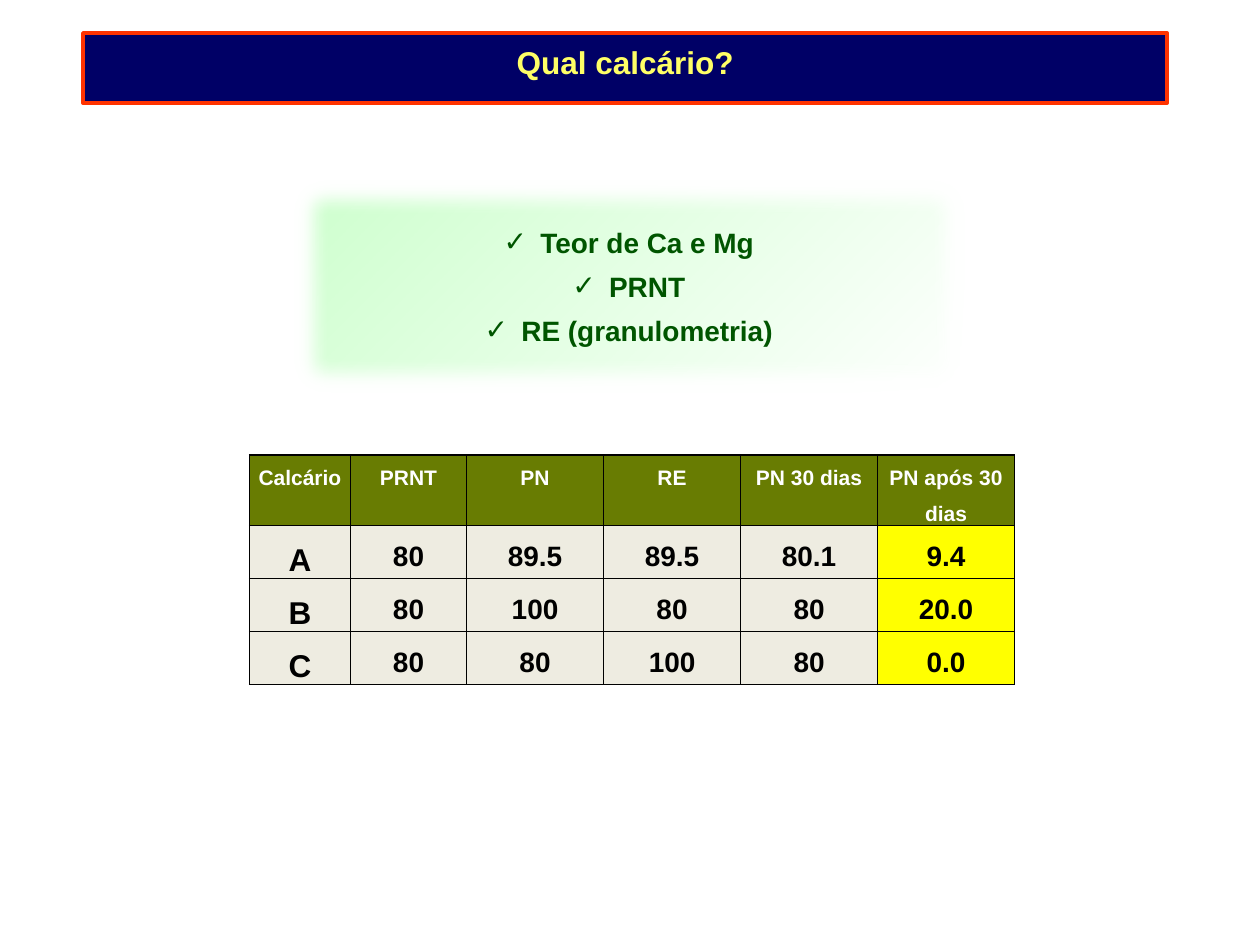
from pptx import Presentation
from pptx.dml.color import RGBColor
from pptx.enum.shapes import MSO_SHAPE as Shape
from pptx.enum.text import MSO_ANCHOR as Anchor, PP_ALIGN as Align
from pptx.oxml.ns import qn
from pptx.util import Pt
from lxml.etree import SubElement

COLORS = {
    "navy": "000066",
    "orange": "FF3300",
    "title": "FFFF66",
    "mint": "CCFFCC",
    "white": "FFFFFF",
    "cream": "FFFF99",
    "green": "005500",
    "olive": "687C02",
    "beige": "EEECE1",
    "yellow": "FFFF00",
    "black": "000000",
}
CRITERIA = ["Teor de Ca e Mg", "PRNT", "RE (granulometria)"]
LIMESTONES = [
    ["Calcário", "PRNT", "PN", "RE", "PN 30 dias", "PN após 30 dias"],
    ["A", "80", "89.5", "89.5", "80.1", "9.4"],
    ["B", "80", "100", "80", "80", "20.0"],
    ["C", "80", "80", "100", "80", "0.0"],
]
COLUMN_WIDTHS = [57.7, 66.3] + [78.3] * 4
ROW_HEIGHTS = [40] + [30.25] * 3


def color(name):
    return RGBColor.from_string(COLORS[name])


def format_paragraph(paragraph, size, color_name):
    paragraph.alignment = Align.CENTER
    for span in paragraph.runs:
        span.font.name = "Arial"
        span.font.size = Pt(size)
        span.font.bold = True
        span.font.color.rgb = color(color_name)


def add_box(page, left, top, width, height, line_name, line_width):
    box = page.shapes.add_shape(
        Shape.RECTANGLE, Pt(left), Pt(top), Pt(width), Pt(height))
    box.shadow.inherit = False
    box.line.color.rgb = color(line_name)
    box.line.width = Pt(line_width)
    box.text_frame.word_wrap = True
    return box


def add_title(page):
    box = add_box(page, 47.5, 18.9, 619.4, 40, "orange", 2.25)
    box.fill.solid()
    box.fill.fore_color.rgb = color("navy")
    frame = box.text_frame
    frame.vertical_anchor = Anchor.TOP
    frame.text = "Qual calcário?"
    frame.paragraphs[0].line_spacing = 1.1
    format_paragraph(frame.paragraphs[0], 18, "title")


def soften_edges(box, radius):
    effects = box._element.spPr.find(qn("a:effectLst"))
    SubElement(effects, qn("a:softEdge"), rad=str(Pt(radius)))


def add_check_mark(paragraph):
    properties = paragraph._p.get_or_add_pPr()
    properties.set("marL", str(Pt(21)))
    properties.set("indent", str(Pt(-21)))
    SubElement(properties, qn("a:buFont"), typeface="Arial")
    SubElement(properties, qn("a:buChar"), char="✓")


def add_criteria(page):
    box = add_box(page, 164.2, 99.4, 390.2, 128.2, "cream", 1.5)
    box.fill.gradient()
    box.fill.gradient_angle = 315
    for stop, name in zip(box.fill.gradient_stops, ["mint", "white"]):
        stop.color.rgb = color(name)
    soften_edges(box, 12.5)
    frame = box.text_frame
    frame.vertical_anchor = Anchor.MIDDLE
    frame.text = "\n".join(CRITERIA)
    for index, paragraph in enumerate(frame.paragraphs):
        if index:
            paragraph.space_before = Pt(6)
        add_check_mark(paragraph)
        format_paragraph(paragraph, 16, "green")


def add_borders(cell):
    properties = cell._tc.get_or_add_tcPr()
    for side in ["lnL", "lnR", "lnT", "lnB"]:
        border = SubElement(properties, qn(f"a:{side}"), w=str(Pt(1)))
        fill = SubElement(border, qn("a:solidFill"))
        SubElement(fill, qn("a:srgbClr"), val=COLORS["black"])


def fill_cell(cell, text, size, text_color, fill_color):
    cell.margin_left = cell.margin_right = Pt(5)
    cell.margin_top = cell.margin_bottom = 0
    add_borders(cell)
    cell.fill.solid()
    cell.fill.fore_color.rgb = color(fill_color)
    cell.text_frame.text = text
    paragraph = cell.text_frame.paragraphs[0]
    paragraph.line_spacing = 1.5
    format_paragraph(paragraph, size, text_color)


def add_limestone_table(page):
    table = page.shapes.add_table(
        len(LIMESTONES), len(COLUMN_WIDTHS), Pt(142.6), Pt(260),
        Pt(sum(COLUMN_WIDTHS)), Pt(sum(ROW_HEIGHTS))).table
    for column, width in zip(table.columns, COLUMN_WIDTHS):
        column.width = Pt(width)
    for row, height in zip(table.rows, ROW_HEIGHTS):
        row.height = Pt(height)
    last = len(COLUMN_WIDTHS) - 1
    for i, values in enumerate(LIMESTONES):
        for j, text in enumerate(values):
            if i == 0:
                style = 12, "white", "olive"
            else:
                style = (18 if j == 0 else 16, "black",
                         "yellow" if j == last else "beige")
            fill_cell(table.cell(i, j), text, *style)


def main():
    deck = Presentation()
    deck.slide_width, deck.slide_height = Pt(720), Pt(540)
    page = deck.slides.add_slide(deck.slide_layouts[6])
    add_title(page)
    add_limestone_table(page)
    add_criteria(page)
    deck.save("out.pptx")


if __name__ == "__main__":
    main()
